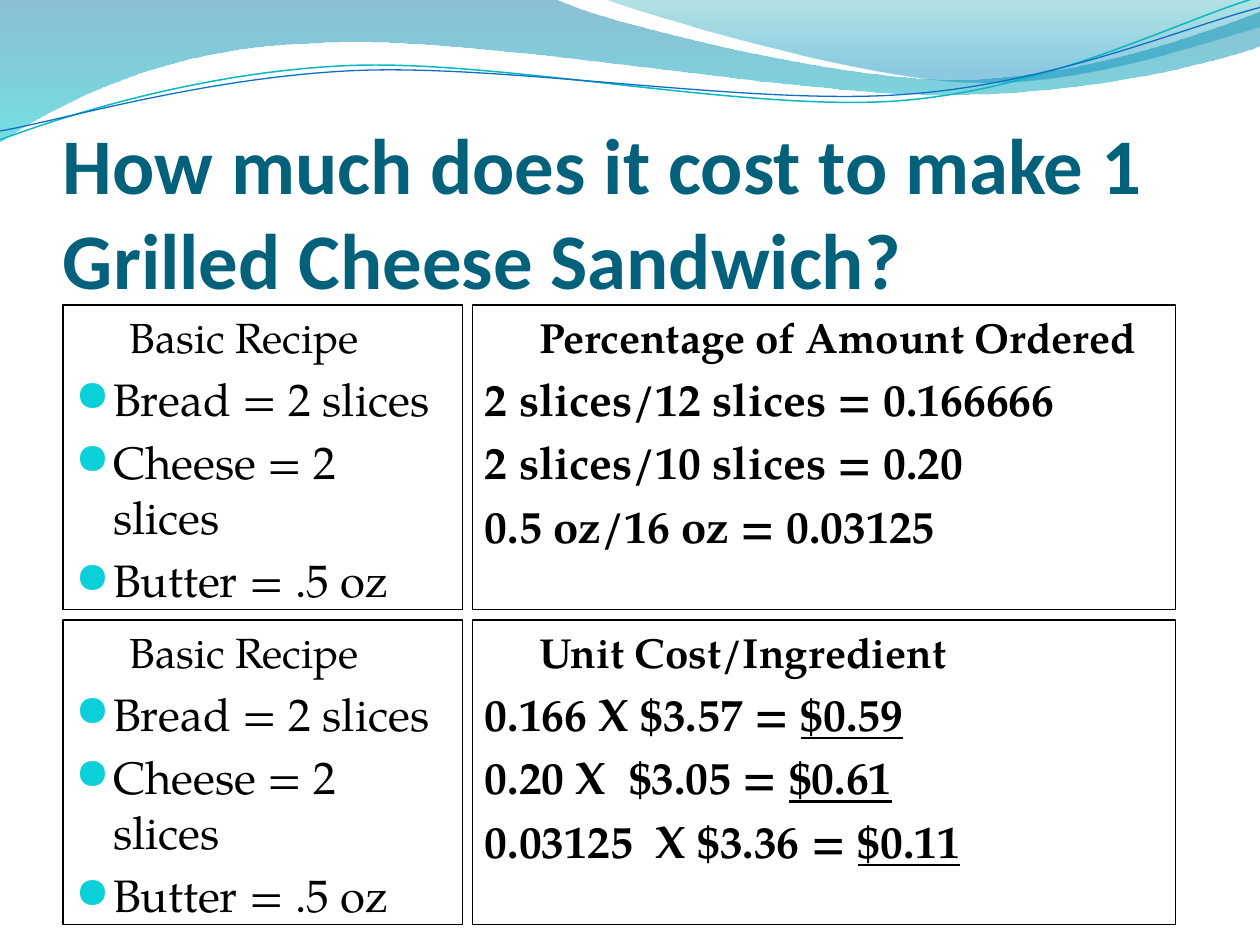
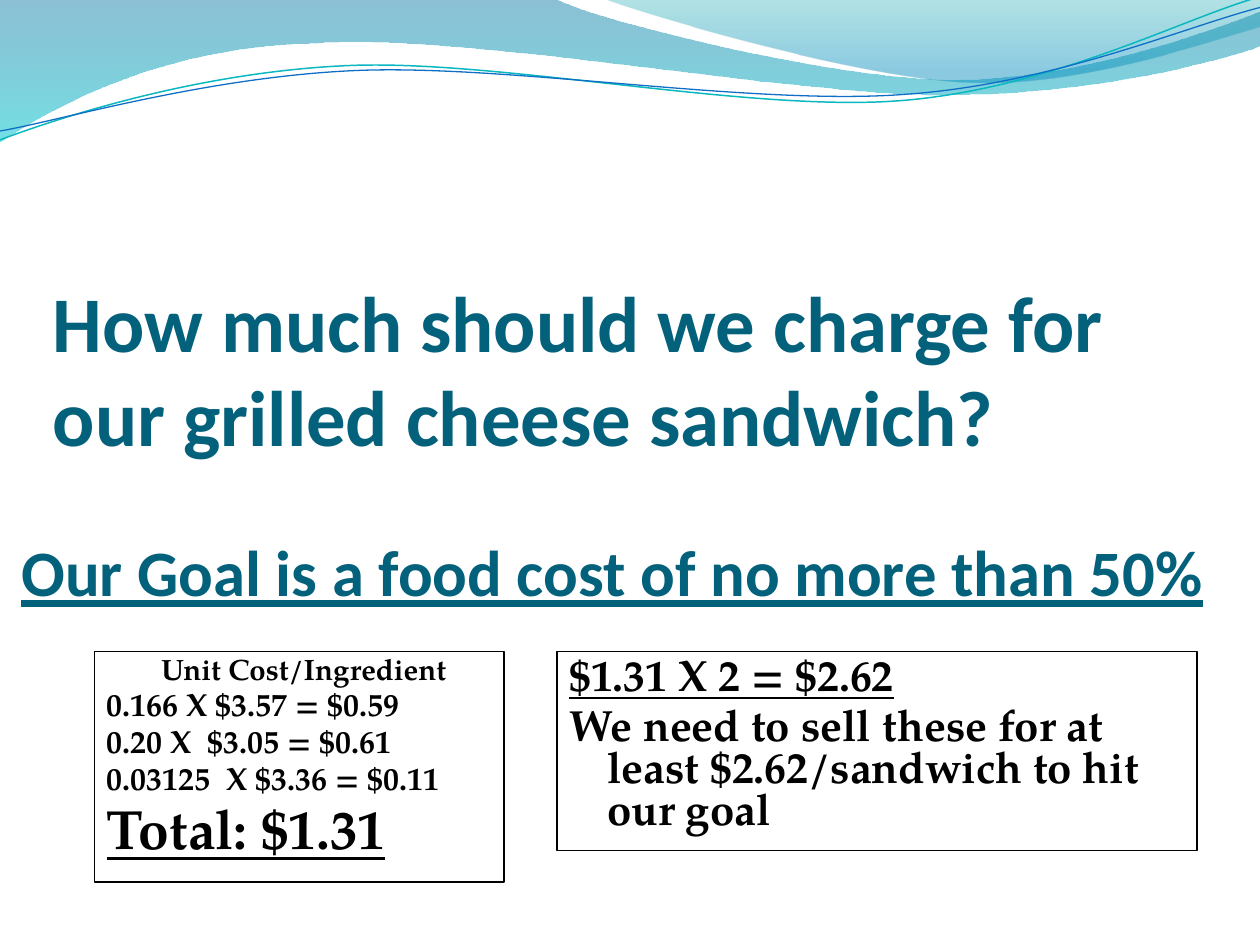
from dataclasses import dataclass
from math import cos, radians, sin

from lxml.etree import SubElement
from pptx import Presentation
from pptx.dml.color import RGBColor
from pptx.enum.shapes import MSO_SHAPE as Shape
from pptx.enum.text import MSO_ANCHOR as Anchor, PP_ALIGN as Align
from pptx.oxml.ns import qn
from pptx.util import Inches, Pt


@dataclass(frozen=True)
class Theme:
    title_color: str = "04617B"
    text_color: str = "000000"
    bullet_color: str = "0BD0D9"
    title_font: str = "Calibri"
    body_font: str = "TeX Gyre Pagella"
    bullet_font: str = "OpenSymbol"
    title_size: float = 45
    goal_size: float = 37
    heading_size: float = 24
    item_size: float = 26
    answer_size: float = 25
    small_heading_size: float = 16.8
    small_item_size: float = 18.2
    total_size: float = 31.5
    border_width: float = 0.75
    tight_spacing: float = 0.8


THEME = Theme()


@dataclass(frozen=True)
class Line:
    """One paragraph of a box: plain text, then an underlined ending."""
    text: str
    underlined: str = ""
    size: float = THEME.item_size
    heading: bool = False
    bullet: bool = False


# Wave outlines: a start point, then line ends (2 numbers) or Bezier curves (6)
BROAD_WAVE = [
    (0, 0), (4.4, -0.01),
    (4.76, 0.17, 6.64, 0.63, 7.58, 0.63), (8.53, 0.63, 9.58, 0.26, 10, 0.09),
    (10.01, 0.36),
    (9.83, 0.44, 8.7, 0.76, 7.46, 0.75), (6.22, 0.75, 3.82, 0.28, 2.57, 0.34),
    (1.29, 0.36, 0.46, 0.83, -0.01, 1.13), (0, 0),
]
RIGHT_WAVE = [
    (4.79, -0.01),
    (5.09, 0.11, 6.82, 0.62, 7.69, 0.65), (8.56, 0.69, 9.61, 0.32, 10, 0.21),
    (10, 0), (4.79, -0.01),
]
TEAL_STROKE = [
    (0, 1.11),
    (0.48, 0.93, 1.58, 0.57, 2.77, 0.52), (3.95, 0.47, 5.93, 0.89, 7.13, 0.8),
    (8.33, 0.71, 9.38, 0.15, 9.98, -0.02),
]
BLUE_STROKE = [
    (0, 1.04),
    (0.47, 0.96, 1.64, 0.61, 2.83, 0.56), (4.03, 0.51, 5.97, 0.84, 7.17, 0.75),
    (8.36, 0.67, 9.41, 0.21, 10, 0.06),
]
# Gradient stops: position, colour, opacity in percent
FILLED_WAVES = [
    (BROAD_WAVE, [(0, "0074A1", 45), (1, "00C6CF", 55)]),
    (RIGHT_WAVE, [(0, "00A1A9", 30), (0.8, "008BBF", 45)]),
]
# Strokes: outline, centre, colour, width
WAVE_STROKES = [
    (TEAL_STROKE, (4.99, 0.58), "0AB8BF", 0.85),
    (BLUE_STROKE, (5, 0.59), "0F6FC6", 0.75),
]
STROKE_TILT = -2.7

RECIPE = [
    Line("Basic Recipe", size=THEME.heading_size, heading=True),
    Line("Bread = 2 slices", bullet=True),
    Line("Cheese = 2 slices", bullet=True),
    Line("Butter = .5 oz", bullet=True),
]
PERCENTAGES = [
    Line("Percentage of Amount Ordered", size=THEME.heading_size, heading=True),
    Line("2 slices/12 slices = 0.166666"),
    Line("2 slices/10 slices = 0.20"),
    Line("0.5 oz/16 oz = 0.03125"),
]
COST_HEADING = "Unit Cost/Ingredient"
COSTS = [
    ("0.166 X $3.57 = ", "$0.59"),
    ("0.20 X  $3.05 = ", "$0.61"),
    ("0.03125  X $3.36 = ", "$0.11"),
]
UNIT_COSTS = [
    Line(COST_HEADING, size=THEME.heading_size, heading=True),
    *(Line(sum_text, cost) for sum_text, cost in COSTS),
]
COST_TOTAL = [
    Line(COST_HEADING, size=THEME.small_heading_size, heading=True),
    *(Line(sum_text + cost, size=THEME.small_item_size) for sum_text, cost in COSTS),
    Line("", "Total: $1.31", size=THEME.total_size),
]
PRICE = [
    Line("", "$1.31 X 2 = $2.62", size=THEME.answer_size),
    Line("We need to sell these for at least $2.62/sandwich to hit our goal",
         size=THEME.answer_size),
]


def rgb(color):
    return RGBColor.from_string(color)


def level_out(outline, center):
    """Turn an outline back to level, so that the shape itself can be tilted."""
    angle = radians(-STROKE_TILT)
    cx, cy = center

    def turn(x, y):
        dx, dy = x - cx, y - cy
        return (cx + dx * cos(angle) - dy * sin(angle),
                cy + dx * sin(angle) + dy * cos(angle))

    return [sum((turn(*pair) for pair in zip(part[::2], part[1::2])), ())
            for part in outline]


def add_outline(slide, outline, left, top, close):
    points = [(Inches(left + x), Inches(top + y))
              for part in outline for x, y in zip(part[::2], part[1::2])]
    builder = slide.shapes.build_freeform(*points[0])
    builder.add_line_segments(points[1:], close=close)
    wave = builder.convert_to_shape()
    wave.shadow.inherit = False
    # Merge each run of three points into one Bezier curve
    steps = iter(list(wave.element.iter(qn("a:lnTo"))))
    for part in outline[1:]:
        first, *others = [next(steps) for _ in range(len(part) // 2)]
        if others:
            first.tag = qn("a:cubicBezTo")
            for step in others:
                first.append(step[0])
                step.getparent().remove(step)
    return wave


def add_wave_band(slide, left=0, top=0):
    # Translucent waves
    for outline, stops in FILLED_WAVES:
        wave = add_outline(slide, outline, left, top, close=True)
        wave.line.fill.background()
        wave.fill.gradient()
        wave.fill.gradient_angle = 270
        for stop, (position, color, _) in zip(wave.fill.gradient_stops, stops):
            stop.position = position
            stop.color.rgb = rgb(color)
        for node, (_, _, opacity) in zip(wave.element.iter(qn("a:srgbClr")), stops):
            SubElement(node, qn("a:alpha"), val=str(opacity * 1000))
    # Thin strokes
    for outline, center, color, width in WAVE_STROKES:
        stroke = add_outline(slide, level_out(outline, center), left, top, close=False)
        stroke.rotation = STROKE_TILT
        stroke.fill.background()
        stroke.line.color.rgb = rgb(color)
        stroke.line.width = Pt(width)


def add_run(paragraph, text, size, font, color, bold, underline=False):
    run = paragraph.add_run()
    run.text = text
    run.font.size = Pt(size)
    run.font.name = font
    run.font.color.rgb = rgb(color)
    run.font.bold = bold
    if underline:
        run.font.underline = True


def add_title(slide, text, box, size=THEME.title_size, underline=False):
    frame = slide.shapes.add_textbox(*map(Inches, box)).text_frame
    frame.word_wrap = True
    frame.vertical_anchor = Anchor.BOTTOM
    frame.margin_left = frame.margin_right = frame.margin_bottom = 0
    frame.margin_top = Inches(0.05)
    add_run(frame.paragraphs[0], text, size, THEME.title_font, THEME.title_color,
            True, underline)


def add_bullet(properties):
    color = SubElement(properties, qn("a:buClr"))
    SubElement(color, qn("a:srgbClr"), val=THEME.bullet_color)
    SubElement(properties, qn("a:buSzPct"), val="95000")
    SubElement(properties, qn("a:buFont"), typeface=THEME.bullet_font)
    SubElement(properties, qn("a:buChar"), char="●")


def add_text_box(slide, lines, box, bold=True, spacing=None):
    panel = slide.shapes.add_shape(Shape.RECTANGLE, *map(Inches, box))
    panel.shadow.inherit = False
    panel.fill.background()
    panel.line.color.rgb = rgb(THEME.text_color)
    panel.line.width = Pt(THEME.border_width)
    frame = panel.text_frame
    frame.word_wrap = True
    frame.vertical_anchor = Anchor.TOP
    for index, line in enumerate(lines):
        paragraph = frame.add_paragraph() if index else frame.paragraphs[0]
        paragraph.alignment = Align.LEFT
        paragraph.level = int(line.heading)
        paragraph.line_spacing = spacing
        paragraph.space_before = Pt(0.2 * line.size)
        margin, indent = (0.7, -0.27) if line.heading else (0.3, -0.3)
        properties = paragraph._p.get_or_add_pPr()
        properties.set("marL", str(Inches(margin)))
        properties.set("indent", str(Inches(indent)))
        if line.bullet:
            add_bullet(properties)
        for text, underline in ((line.text, False), (line.underlined, True)):
            if text:
                add_run(paragraph, text, line.size, THEME.body_font,
                        THEME.text_color, bold, underline)


def add_cost_grid(slide, left, top):
    """Two rows, each a recipe beside its calculation."""
    recipe_width, sums_width, height, gap = 3.17, 5.58, 2.42, 0.08
    for row, sums in enumerate((PERCENTAGES, UNIT_COSTS)):
        row_top = top + row * (height + gap)
        add_text_box(slide, RECIPE, (left, row_top, recipe_width, height), bold=False)
        add_text_box(slide, sums,
                     (left + recipe_width + gap, row_top, sums_width, height))


def add_price_row(slide, left, top):
    """The total cost beside the selling price."""
    for lines, offset, width, height in ((COST_TOTAL, 0, 3.25, 1.83),
                                         (PRICE, 3.67, 5.08, 1.58)):
        add_text_box(slide, lines, (left + offset, top, width, height),
                     spacing=THEME.tight_spacing)


def add_slide(deck):
    slide = deck.slides.add_slide(deck.slide_layouts[6])
    add_wave_band(slide)
    return slide


def main():
    deck = Presentation()
    deck.slide_width, deck.slide_height = Inches(10), Inches(7.5)

    # Cost of one sandwich
    cost = add_slide(deck)
    add_title(cost, "How much does it cost to make 1 Grilled Cheese Sandwich?",
              (0.5, 1, 9, 1.42))
    add_cost_grid(cost, 0.5, 2.42)

    # Selling price
    price = add_slide(deck)
    add_title(price, "How much should we charge for our grilled cheese sandwich?",
              (0.42, 2.25, 9, 1.42))
    add_title(price, "Our Goal is a food cost of no more than 50%",
              (0.17, 3.92, 9.42, 0.92), THEME.goal_size, underline=True)
    add_price_row(price, 0.75, 5.17)

    deck.save("out.pptx")


if __name__ == "__main__":
    main()
